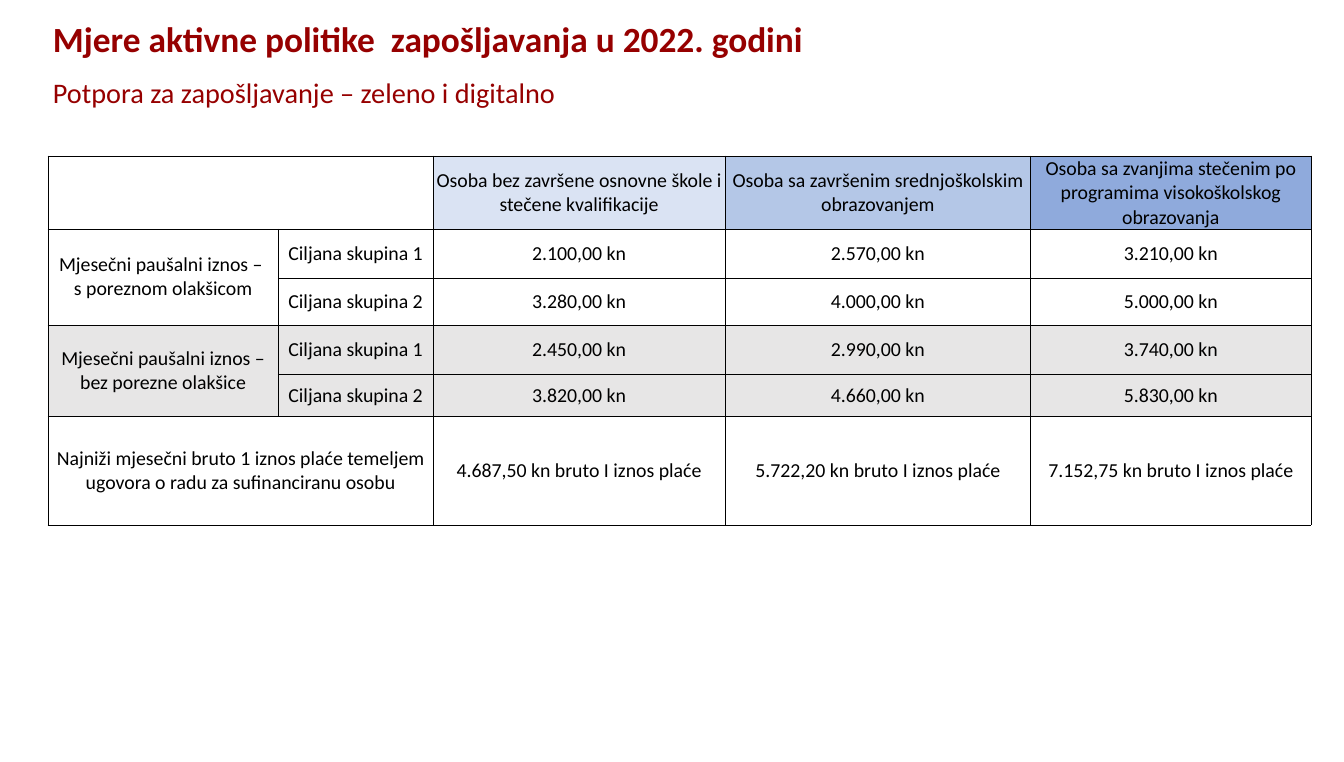
from lxml.etree import SubElement
from pptx import Presentation
from pptx.dml.color import RGBColor
from pptx.enum.text import MSO_ANCHOR, PP_ALIGN
from pptx.oxml.ns import qn
from pptx.util import Pt

SCALE = 9144
COLORS = {
    "title": "960000",
    "text": "000000",
    "border": "000000",
    "low": "DAE3F3",
    "middle": "B4C7E7",
    "high": "8FAADC",
    "gray": "E7E6E6",
}
FORMATS = {
    "title": {"name": "Calibri", "size": Pt(50), "bold": True},
    "subtitle": {"name": "Calibri", "size": Pt(40), "bold": False},
    "cell": {"name": "Calibri", "size": Pt(28), "bold": False},
}
COLUMNS = [452, 304, 573, 600, 550]
ROWS = [143, 97, 91, 97, 83, 213]
CELLS = [
    ["", "", "Osoba bez završene osnovne škole i stečene kvalifikacije",
     "Osoba sa završenim srednjoškolskim obrazovanjem",
     "Osoba sa zvanjima stečenim po programima visokoškolskog obrazovanja"],
    ["Mjesečni paušalni iznos – \ns poreznom olakšicom", "Ciljana skupina 1",
     "2.100,00 kn", "2.570,00 kn", "3.210,00 kn"],
    ["", "Ciljana skupina 2", "3.280,00 kn", "4.000,00 kn", "5.000,00 kn"],
    ["Mjesečni paušalni iznos – bez porezne olakšice", "Ciljana skupina 1",
     "2.450,00 kn", "2.990,00 kn", "3.740,00 kn"],
    ["", "Ciljana skupina 2", "3.820,00 kn", "4.660,00 kn", "5.830,00 kn"],
    ["Najniži mjesečni bruto 1 iznos plaće temeljem ugovora o radu za sufinanciranu osobu", "",
     "4.687,50 kn bruto I iznos plaće", "5.722,20 kn bruto I iznos plaće",
     "7.152,75 kn bruto I iznos plaće"],
]
PLAIN = [None] * 5
GRAY = ["gray"] * 5
FILLS = [[None, None, "low", "middle", "high"], PLAIN, PLAIN, GRAY, GRAY, PLAIN]
MERGES = [((0, 0), (0, 1)), ((1, 0), (2, 0)), ((3, 0), (4, 0)), ((5, 0), (5, 1))]


def px(length):
    return length * SCALE


def set_attributes(target, values):
    for name, value in values.items():
        setattr(target, name, value)


class SlideBuilder:
    def __init__(self, width, height):
        self.presentation = Presentation()
        self.presentation.slide_width = px(width)
        self.presentation.slide_height = px(height)
        self.slide = self.presentation.slides.add_slide(self.presentation.slide_layouts[6])

    def style(self, paragraph, format_name, color):
        set_attributes(paragraph.font, FORMATS[format_name])
        paragraph.font.color.rgb = RGBColor.from_string(COLORS[color])

    def text(self, box, content, format_name, anchor):
        shape = self.slide.shapes.add_textbox(*map(px, box))
        frame = shape.text_frame
        set_attributes(frame, {"word_wrap": True, "vertical_anchor": anchor, "text": content})
        paragraph = frame.paragraphs[0]
        paragraph.line_spacing = 0.9
        self.style(paragraph, format_name, "title")

    def borders(self, cell):
        properties = cell._tc.get_or_add_tcPr()
        for side in ("lnL", "lnR", "lnT", "lnB"):
            line = SubElement(properties, qn(f"a:{side}"), w=str(Pt(1)))
            fill = SubElement(line, qn("a:solidFill"))
            SubElement(fill, qn("a:srgbClr"), val=COLORS["border"])

    def cell(self, cell, content, fill):
        set_attributes(cell, {
            "text": content, "vertical_anchor": MSO_ANCHOR.MIDDLE,
            "margin_left": px(4), "margin_right": px(4),
            "margin_top": px(2), "margin_bottom": px(2),
        })
        for paragraph in cell.text_frame.paragraphs:
            paragraph.alignment = PP_ALIGN.CENTER
            self.style(paragraph, "cell", "text")
        self.borders(cell)
        if fill:
            cell.fill.solid()
            cell.fill.fore_color.rgb = RGBColor.from_string(COLORS[fill])
        else:
            cell.fill.background()

    def table(self, left, top):
        box = (left, top, sum(COLUMNS), sum(ROWS))
        table = self.slide.shapes.add_table(len(ROWS), len(COLUMNS), *map(px, box)).table
        set_attributes(table, {"first_row": False, "horz_banding": False})
        for column, width in zip(table.columns, COLUMNS):
            column.width = px(width)
        for row, height in zip(table.rows, ROWS):
            row.height = px(height)
        for row, contents, fills in zip(table.rows, CELLS, FILLS):
            for cell, content, fill in zip(row.cells, contents, fills):
                self.cell(cell, content, fill)
        for first, last in MERGES:
            table.cell(*first).merge(table.cell(*last))


def main():
    builder = SlideBuilder(2638, 1496)
    builder.text((94, 33, 1637, 96), "Mjere aktivne politike  zapošljavanja u 2022. godini",
                 "title", MSO_ANCHOR.MIDDLE)
    builder.text((94, 150, 2447, 75), "Potpora za zapošljavanje – zeleno i digitalno",
                 "subtitle", MSO_ANCHOR.TOP)
    builder.table(94, 306)
    builder.presentation.save("out.pptx")


if __name__ == "__main__":
    main()
